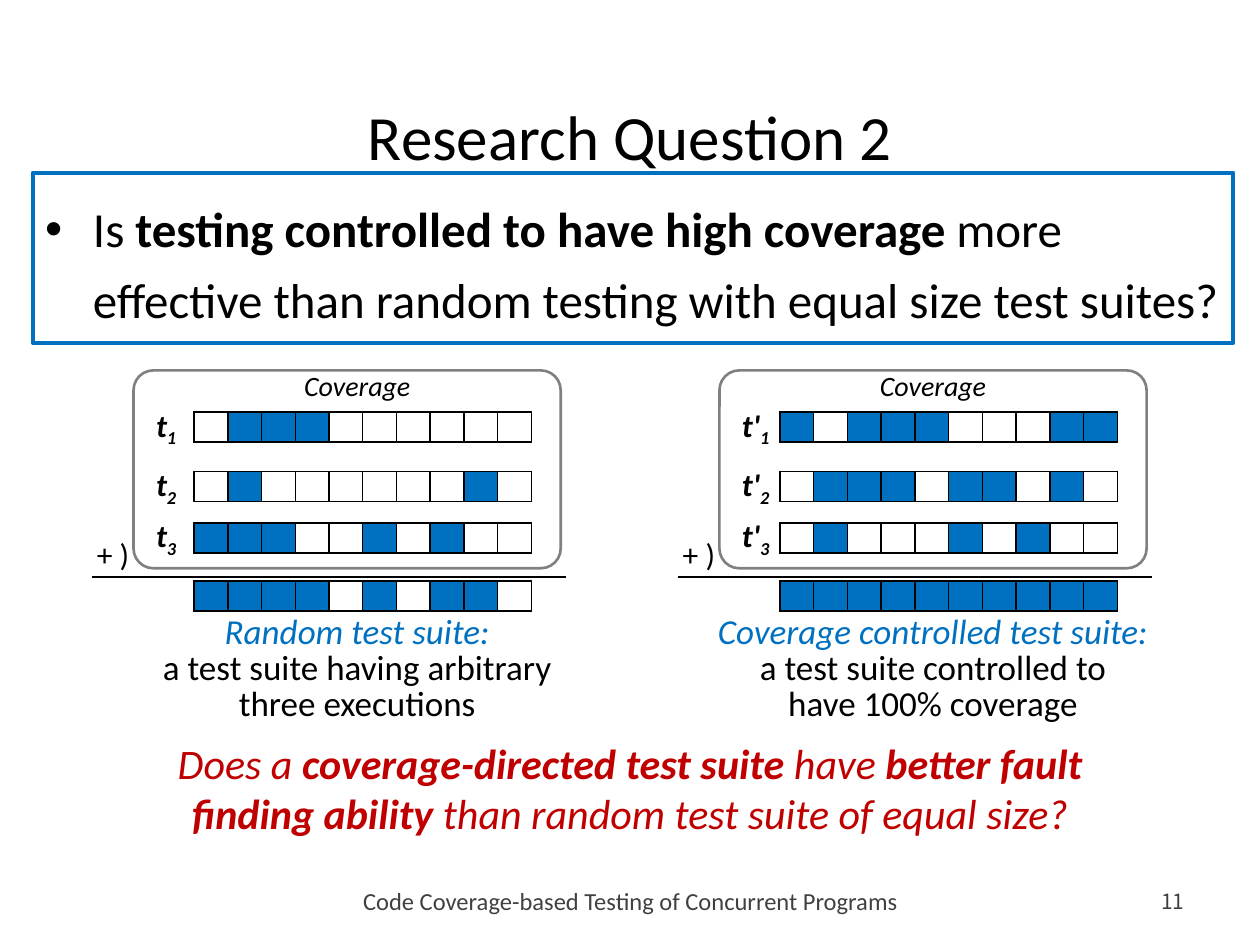
import pptx
import pptx.util
import pptx.dml.color
import pptx.enum.shapes
import pptx.enum.text
import pptx.oxml
import pptx.oxml.ns

Inches, Pt = pptx.util.Inches, pptx.util.Pt
RGBColor = pptx.dml.color.RGBColor
ALIGN = pptx.enum.text.PP_ALIGN
ANCHOR = pptx.enum.text.MSO_ANCHOR
SHAPE = pptx.enum.shapes.MSO_SHAPE
qn = pptx.oxml.ns.qn
NS = pptx.oxml.ns.nsdecls("a")

BLACK = RGBColor(0x00, 0x00, 0x00)
WHITE = RGBColor(0xFF, 0xFF, 0xFF)
BLUE = RGBColor(0x00, 0x70, 0xC0)
RED = RGBColor(0xC0, 0x00, 0x00)
GRAY = RGBColor(0x80, 0x80, 0x80)
DARK = RGBColor(0x40, 0x40, 0x40)

CELLS, CELL_W, CELL_H = 10, 0.268, 0.24
ROW_TOPS = (0.33, 0.80, 1.21)
BORDER = ('<a:{0} {1} w="12700"><a:solidFill><a:srgbClr val="{2}"/>'
          '</a:solidFill></a:{0}>')


def write(p, runs, size, color=BLACK, name="Calibri", **fmt):
    """Add (text, format) runs to a paragraph; raw holds run attributes."""
    for text, extra in runs:
        r = p.add_run()
        r.text = text
        values = {"size": Pt(size), "name": name, **fmt, **extra}
        for key, value in values.pop("raw", {}).items():
            r._r.get_or_add_rPr().set(key, value)
        r.font.color.rgb = values.pop("color", color)
        for key, value in values.items():
            setattr(r.font, key, value)


def add_text(s, box, lines, size, align=ALIGN.LEFT, anchor=ANCHOR.TOP,
             spacing=None, **fmt):
    """Add a wrapped text box with one paragraph for each list of runs."""
    tf = s.shapes.add_textbox(*map(Inches, box)).text_frame
    tf.word_wrap = True
    tf.vertical_anchor = anchor
    for i, runs in enumerate(lines):
        p = tf.add_paragraph() if i else tf.paragraphs[0]
        p.alignment = align
        p.line_spacing = spacing
        write(p, runs, size, **fmt)


def add_frame(s, kind, box, color, width):
    """Add an unfilled outlined shape."""
    sp = s.shapes.add_shape(kind, *map(Inches, box))
    sp.shadow.inherit = False
    sp.fill.background()
    sp.line.color.rgb = color
    sp.line.width = Pt(width)
    return sp


def add_bar(s, x, y, covered):
    """Add a one-row coverage table with the covered cells in blue."""
    table = s.shapes.add_table(1, CELLS, Inches(x), Inches(y),
                               Inches(CELLS * CELL_W), Inches(CELL_H)).table
    table.first_row = table.horz_banding = False
    for i, cell in enumerate(table.iter_cells()):
        table.columns[i].width = Inches(CELL_W)
        for side in ("left", "right", "top", "bottom"):
            setattr(cell, "margin_" + side, 0)
        tc_pr = cell._tc.get_or_add_tcPr()
        for tag in ("lnL", "lnR", "lnT", "lnB"):
            tc_pr.append(pptx.oxml.parse_xml(BORDER.format(tag, NS, BLACK)))
        cell.fill.solid()
        cell.fill.fore_color.rgb = BLUE if i in covered else WHITE
        end = pptx.oxml.parse_xml(f'<a:endParaRPr {NS} sz="800"/>')
        cell.text_frame.paragraphs[0]._p.append(end)


def add_question(s, box):
    """Add the outlined research question with its bullet."""
    sp = add_frame(s, SHAPE.RECTANGLE, box, BLUE, 2.25)
    tf = sp.text_frame
    tf.word_wrap = True
    tf.vertical_anchor = ANCHOR.MIDDLE
    p = tf.paragraphs[0]
    for key, value in {"alignment": ALIGN.LEFT, "line_spacing": 1.2,
                       "space_before": Pt(5.6)}.items():
        setattr(p, key, value)
    p_pr = p._p.get_or_add_pPr()
    p_pr.set("marL", str(Inches(0.38)))
    p_pr.set("indent", str(-Inches(0.38)))
    for xml in (f'<a:buClr {NS}><a:srgbClr val="{BLACK}"/></a:buClr>',
                f'<a:buFont {NS} typeface="Arial"/>',
                f'<a:buChar {NS} char="•"/>'):
        p_pr.append(pptx.oxml.parse_xml(xml))
    write(p, [("Is", {}),
              (" testing controlled to have high coverage ", {"bold": True}),
              ("more effective than random testing with equal size "
               "test suites?", {})], 28)


def add_suite(s, box, label, rows, caption, caption_w, shift=0, label_raw=None):
    """Add a test suite: its executions, their union and a caption."""
    x, y, w, h = box
    frame = add_frame(s, SHAPE.ROUNDED_RECTANGLE, box, GRAY, 1.5)
    frame.adjustments[0] = 0.1
    add_text(s, (x + shift, y - 0.06, w, 0.37), [[("Coverage", {})]], 16,
             ALIGN.CENTER, italic=True)
    raw = label_raw or {}
    for i, (top, covered) in enumerate(zip(ROW_TOPS, rows), 1):
        add_text(s, (x + 0.08, y + top - 0.1, 0.55, 0.4),
                 [[(label, {"raw": raw}),
                   (str(i), {"raw": {**raw, "baseline": "-25000"}})]],
                 18, bold=True, italic=True)
        add_bar(s, x + 0.48, y + top, covered)
    add_bar(s, x + 0.48, y + 1.67, set().union(*rows))
    add_text(s, (x - 0.39, y + 1.26, 0.71, 0.42), [[("+ )", {})]], 18)
    line_y = Inches(y + h + 0.07)
    line = s.shapes.add_connector(
        pptx.enum.shapes.MSO_CONNECTOR.STRAIGHT,
        Inches(x - 0.33), line_y, Inches(x + 3.43), line_y)
    line.line.color.rgb = BLACK
    line.line.width = Pt(1.5)
    line._element.find(qn("p:spPr")).append(
        pptx.oxml.parse_xml(f"<a:effectLst {NS}/>"))
    heading, *body = caption
    lines = [[(heading, {"color": BLUE, "italic": True})]]
    lines += [[(text, {})] for text in body]
    add_text(s, (x + shift + (w - caption_w) / 2, y + 1.9, caption_w, 0.96),
             lines, 20, ALIGN.CENTER, spacing=0.85)


def add_conclusion(s, box):
    """Add the closing question in red."""
    bold = {"bold": True}
    add_text(s, box, [[("Does a ", {}), ("coverage-directed test suite", bold),
                       (" have ", {}), ("better fault finding ability ", bold),
                       ("than random test suite of equal size?", {})]],
             24, ALIGN.CENTER, color=RED, italic=True)


def add_footer(s, box):
    """Add the talk title and the slide number."""
    x, y, w, h = box
    add_text(s, (x, y, 6.79, h),
             [[("Code Coverage-based Testing of Concurrent Programs", {})]],
             14, ALIGN.CENTER, ANCHOR.MIDDLE, color=DARK)
    add_text(s, (x + w - 0.56, y, 0.56, h), [[("11", {})]], 12, ALIGN.RIGHT,
             ANCHOR.MIDDLE, color=DARK, name="Noto Sans CJK KR")


def add_title(s, box):
    """Place and format the title placeholder."""
    sp = s.shapes.title
    for key, value in zip(("left", "top", "width", "height"), box):
        setattr(sp, key, Inches(value))
    tf = sp.text_frame
    tf.vertical_anchor = ANCHOR.MIDDLE
    tf.paragraphs[0].alignment = ALIGN.CENTER
    write(tf.paragraphs[0], [("Research Question 2", {})], 36)


def main():
    """Build and save the slide."""
    prs = pptx.Presentation()
    prs.slide_width, prs.slide_height = Inches(10), Inches(7.5)
    s = prs.slides.add_slide(prs.slide_layouts[5])
    add_title(s, (0.5, 0.45, 9, 1.25))
    add_question(s, (0.26, 1.37, 9.53, 1.35))
    add_suite(s, (1.06, 2.94, 3.39, 1.57), "t",
              [{1, 2, 3}, {1, 8}, {0, 1, 2, 5, 7}],
              ["Random test suite:",
               "a test suite having arbitrary three executions"],
              3.39, shift=0.08, label_raw={"spc": "-150"})
    add_suite(s, (5.71, 2.94, 3.39, 1.57), "t'",
              [{0, 2, 3, 4, 8, 9}, {1, 2, 3, 5, 6, 8}, {1, 5, 7}],
              ["Coverage controlled test suite:",
               "a test suite controlled to", "have 100% coverage"], 3.72)
    add_conclusion(s, (1.1, 5.8, 7.8, 0.91))
    add_footer(s, (1.61, 6.95, 7.89, 0.4))
    prs.save("out.pptx")


if __name__ == "__main__":
    main()
